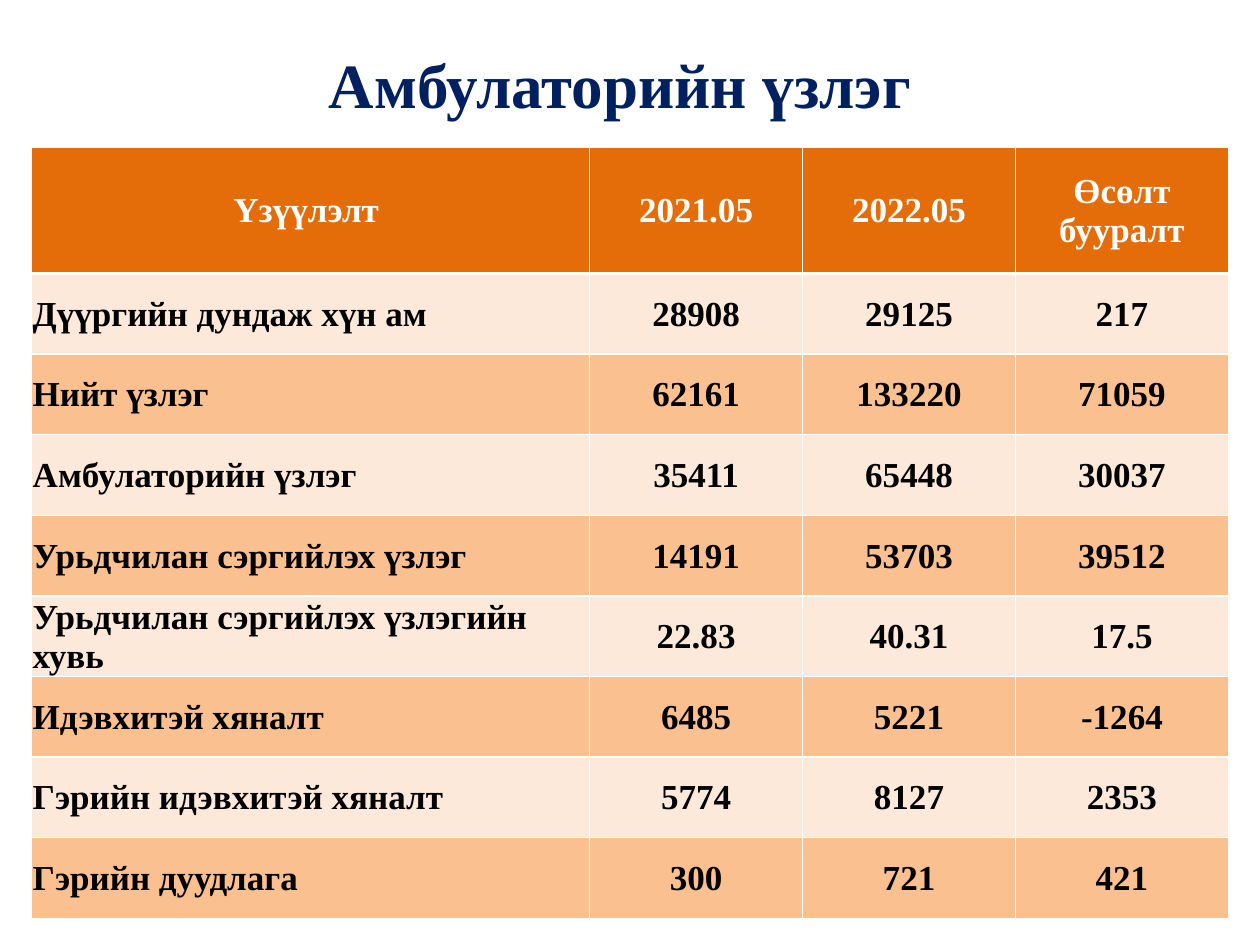
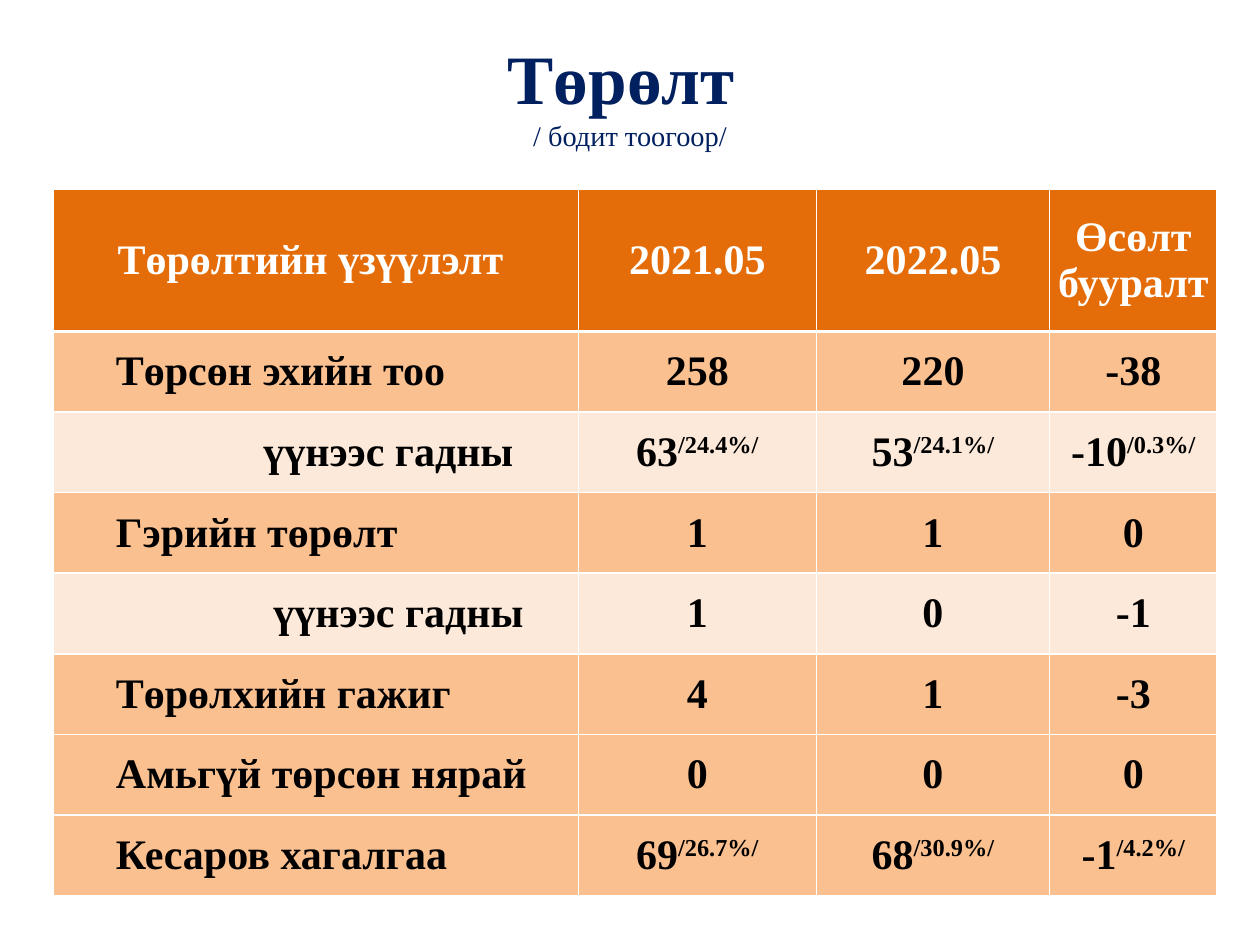
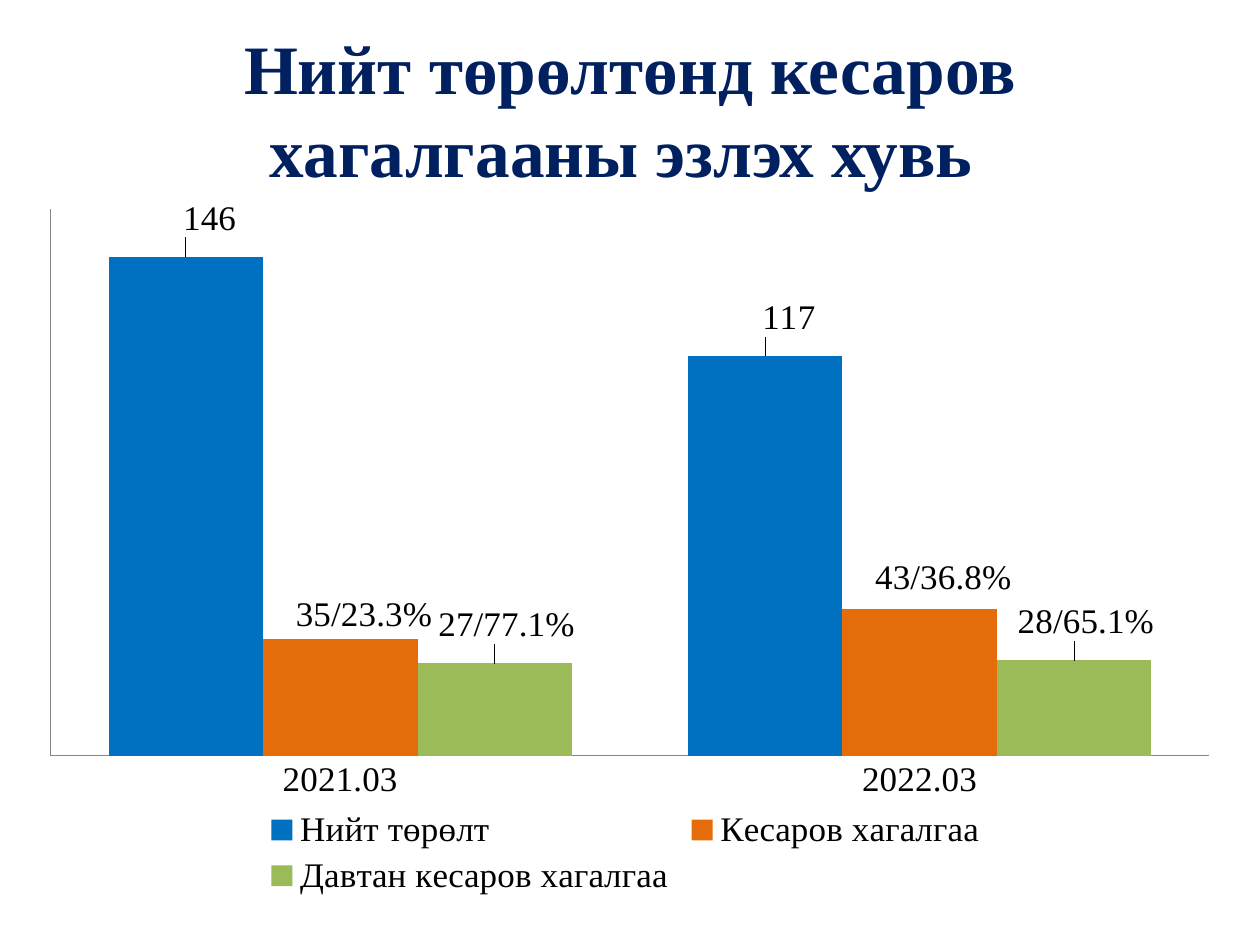
from lxml import etree
from pptx import Presentation
from pptx.chart.data import CategoryChartData
from pptx.dml.color import RGBColor
from pptx.enum.chart import XL_CHART_TYPE, XL_LABEL_POSITION, XL_LEGEND_POSITION, XL_TICK_LABEL_POSITION, XL_TICK_MARK
from pptx.enum.text import MSO_ANCHOR, MSO_AUTO_SIZE, PP_ALIGN
from pptx.oxml.ns import qn
from pptx.util import Inches, Pt

FONT = "Times New Roman"
NAVY, WHITE, BLACK, GREY = "002060", "FFFFFF", "000000", "868686"
ORANGE, PEACH, CREAM = "E46D0A", "FAC090", "FDE9D9"
BLUE, CHART_ORANGE, GREEN = "0070C0", "E46C0A", "9BBB59"


def color(value):
    return RGBColor.from_string(value)


def set_values(target, values):
    for name, value in values.items():
        setattr(target, name, value)


def set_font(font, size, fill, bold=False):
    set_values(font, {"name": FONT, "size": Pt(size), "bold": bold})
    font.color.rgb = color(fill)


def add_layout(parent, index, values):
    """Insert a manual chart layout into a chart part."""
    layout = etree.Element(qn("c:layout"))
    manual = etree.SubElement(layout, qn("c:manualLayout"))
    for name, value in values.items():
        etree.SubElement(manual, qn(f"c:{name}")).set("val", str(value))
    for old in parent.findall(qn("c:layout")):
        parent.remove(old)
    parent.insert(index, layout)


class SlideBuilder:
    def __init__(self, deck):
        self.deck = deck
        self.page = None

    def add_page(self):
        self.page = self.deck.slides.add_slide(self.deck.slide_layouts[5])

    def add_title(self, box, lines):
        """Each line is (text, size, bold); lines are parted by a line break."""
        title = self.page.shapes.title
        set_values(title, dict(zip(("left", "top", "width", "height"), map(Inches, box))))
        set_values(title.text_frame, {"word_wrap": True, "auto_size": MSO_AUTO_SIZE.NONE,
                                      "vertical_anchor": MSO_ANCHOR.MIDDLE})
        para = title.text_frame.paragraphs[0]
        para.alignment = PP_ALIGN.CENTER
        for number, (text, size, bold) in enumerate(lines):
            if number:
                para.add_line_break()
            span = para.add_run()
            span.text = text
            set_font(span.font, size, NAVY, bold)

    def add_borders(self, cell, widths):
        properties = cell._tc.get_or_add_tcPr()
        for side, width in zip("LRTB", widths):
            line = etree.SubElement(properties, qn(f"a:ln{side}"), w=str(Pt(width)))
            fill = etree.SubElement(line, qn("a:solidFill"))
            etree.SubElement(fill, qn("a:srgbClr"), val=WHITE)

    def fill_cell(self, cell, content, size, text_color, fill, margin, indent=None):
        """Content is a text, or a pair of text and superscript."""
        set_values(cell, {"margin_left": margin, "margin_right": margin, "margin_top": margin,
                          "margin_bottom": 0, "vertical_anchor": MSO_ANCHOR.MIDDLE})
        cell.fill.solid()
        cell.fill.fore_color.rgb = color(fill)
        para = cell.text_frame.paragraphs[0]
        if indent is None:
            para.alignment = PP_ALIGN.CENTER
        else:
            para.alignment = PP_ALIGN.LEFT
            para._p.get_or_add_pPr().set("marL", str(Inches(indent)))
        parts = (content,) if isinstance(content, str) else content
        for number, text in enumerate(parts):
            span = para.add_run()
            span.text = text
            set_font(span.font, size, text_color, True)
            if number:
                span.font._element.set("baseline", "30000")

    def add_table(self, box, widths, heights, header, rows, size, margin):
        """Each row is (fill, label indent, cell contents)."""
        frame = self.page.shapes.add_table(len(rows) + 1, len(widths), *map(Inches, box))
        table = frame.table
        table.horz_banding = False
        for column, width in zip(table.columns, widths):
            column.width = Inches(width)
        for row, height in zip(table.rows, heights):
            row.height = Inches(height)
        for r, (fill, indent, contents) in enumerate([(ORANGE, None, header)] + rows):
            for c, content in enumerate(contents):
                cell = table.cell(r, c)
                self.add_borders(cell, (1, 1, 1.5 if r == 1 else 1, 1.5 if r == 0 else 1))
                self.fill_cell(cell, content, size, BLACK if r else WHITE, fill,
                               Inches(margin), indent if c == 0 else None)

    def add_column_chart(self, box, categories, series_list, size):
        """Each series is (name, color, values, labels, label offsets)."""
        data = CategoryChartData()
        data.categories = categories
        for name, _, values, _, _ in series_list:
            data.add_series(name, values)
        chart = self.page.shapes.add_chart(XL_CHART_TYPE.COLUMN_CLUSTERED, *map(Inches, box), data).chart
        set_font(chart.font, size, BLACK)
        set_values(chart, {"has_title": False, "has_legend": True})
        set_values(chart.legend, {"position": XL_LEGEND_POSITION.BOTTOM, "include_in_layout": False})

        # Axes and plot area
        for axis in (chart.category_axis, chart.value_axis):
            set_values(axis, {"major_tick_mark": XL_TICK_MARK.NONE, "minor_tick_mark": XL_TICK_MARK.NONE,
                              "has_major_gridlines": False})
            axis.format.line.color.rgb = color(GREY)
            axis.format.line.width = Pt(0.75)
        set_values(chart.value_axis, {"tick_label_position": XL_TICK_LABEL_POSITION.NONE,
                                      "minimum_scale": 0, "maximum_scale": 160})
        plot = chart.plots[0]
        set_values(plot, {"gap_width": 75, "overlap": 0, "vary_by_categories": False})
        add_layout(chart._chartSpace.chart.plotArea, 0, {
            "layoutTarget": "inner", "xMode": "edge", "yMode": "edge",
            "x": 0.016, "y": 0, "w": 0.968, "h": 0.789})

        # Series and their labels
        for series, (_, fill, _, labels, offsets) in zip(plot.series, series_list):
            series.format.fill.solid()
            series.format.fill.fore_color.rgb = color(fill)
            series.data_labels.show_value = True
            for number, (text, (x, y)) in enumerate(zip(labels, offsets)):
                label = series.points[number].data_label
                if text:
                    span = label.text_frame.paragraphs[0].add_run()
                    span.text = text
                    set_font(span.font, size, BLACK)
                label.position = XL_LABEL_POSITION.OUTSIDE_END
                add_layout(series.data_labels._element.findall(qn("c:dLbl"))[number], 1, {"x": x, "y": y})


def main():
    deck = Presentation()
    set_values(deck, {"slide_width": Inches(10), "slide_height": Inches(7.5)})
    builder = SlideBuilder(deck)
    periods = ["2021.05", "2022.05", "Өсөлт бууралт"]

    # Outpatient visits
    visits = [
        ("Дүүргийн дундаж хүн ам", "28908", "29125", "217"),
        ("Нийт үзлэг", "62161", "133220", "71059"),
        ("Амбулаторийн үзлэг", "35411", "65448", "30037"),
        ("Урьдчилан сэргийлэх үзлэг", "14191", "53703", "39512"),
        ("Урьдчилан сэргийлэх үзлэгийн хувь", "22.83", "40.31", "17.5"),
        ("Идэвхитэй хяналт", "6485", "5221", "-1264"),
        ("Гэрийн идэвхитэй хяналт", "5774", "8127", "2353"),
        ("Гэрийн дуудлага", "300", "721", "421"),
    ]
    builder.add_page()
    builder.add_title((0.42, 0.25, 9, 0.83), [("Амбулаторийн үзлэг", 36, True)])
    builder.add_table((0.25, 1.17, 9.5, 6.13), [4.43] + [1.69] * 3, [1] + [0.64] * 8,
                      ["Үзүүлэлт "] + periods,
                      [(PEACH if i % 2 else CREAM, 0, row) for i, row in enumerate(visits)], 20, 0.01)

    # Births
    births = [
        (PEACH, 0.5, ("Төрсөн эхийн тоо", "258", "220", "-38")),
        (CREAM, 1.67, ("үүнээс гадны", ("63", "/24.4%/"), ("53", "/24.1%/"), ("-10", "/0.3%/"))),
        (PEACH, 0.5, ("Гэрийн төрөлт", "1", "1", "0")),
        (CREAM, 1.75, ("үүнээс гадны", "1", "0", "-1")),
        (PEACH, 0.5, ("Төрөлхийн гажиг", "4", "1", "-3")),
        (PEACH, 0.5, ("Амьгүй төрсөн нярай", "0", "0", "0")),
        (PEACH, 0.5, ("Кесаров хагалгаа", ("69", "/26.7%/"), ("68", "/30.9%/"), ("-1", "/4.2%/"))),
    ]
    builder.add_page()
    builder.add_title((0.5, 0.33, 9, 0.83), [("Төрөлт ", 39.6, True), ("/ бодит тоогоор/", 16.2, False)])
    builder.add_table((0.42, 1.5, 9.25, 5.58), [4.17, 1.89, 1.85, 1.33], [1.13] + [0.64] * 7,
                      ["Төрөлтийн үзүүлэлт "] + periods, births, 24, 0)

    # Share of caesarean sections
    builder.add_page()
    builder.add_title((0.5, 0.3, 9, 1.12), [("Нийт төрөлтөнд кесаров хагалгааны эзлэх хувь ", 39.6, True)])
    builder.add_column_chart((0.25, 1.58, 9.5, 5.58), ["2021.03", "2022.03"], [
        ("Нийт төрөлт", BLUE, (146, 117), (None, None), ((0.02, -0.02), (0.02, -0.02))),
        ("Кесаров хагалгаа ", CHART_ORANGE, (34, 43), ("35/23.3%", "43/36.8%"), ((0.02, 0), (0.02, -0.01))),
        ("Давтан кесаров хагалгаа", GREEN, (27, 28), ("27/77.1%", "28/65.1%"), ((0.01, -0.02), (0.01, -0.02))),
    ], 20)

    deck.save("out.pptx")


if __name__ == "__main__":
    main()
